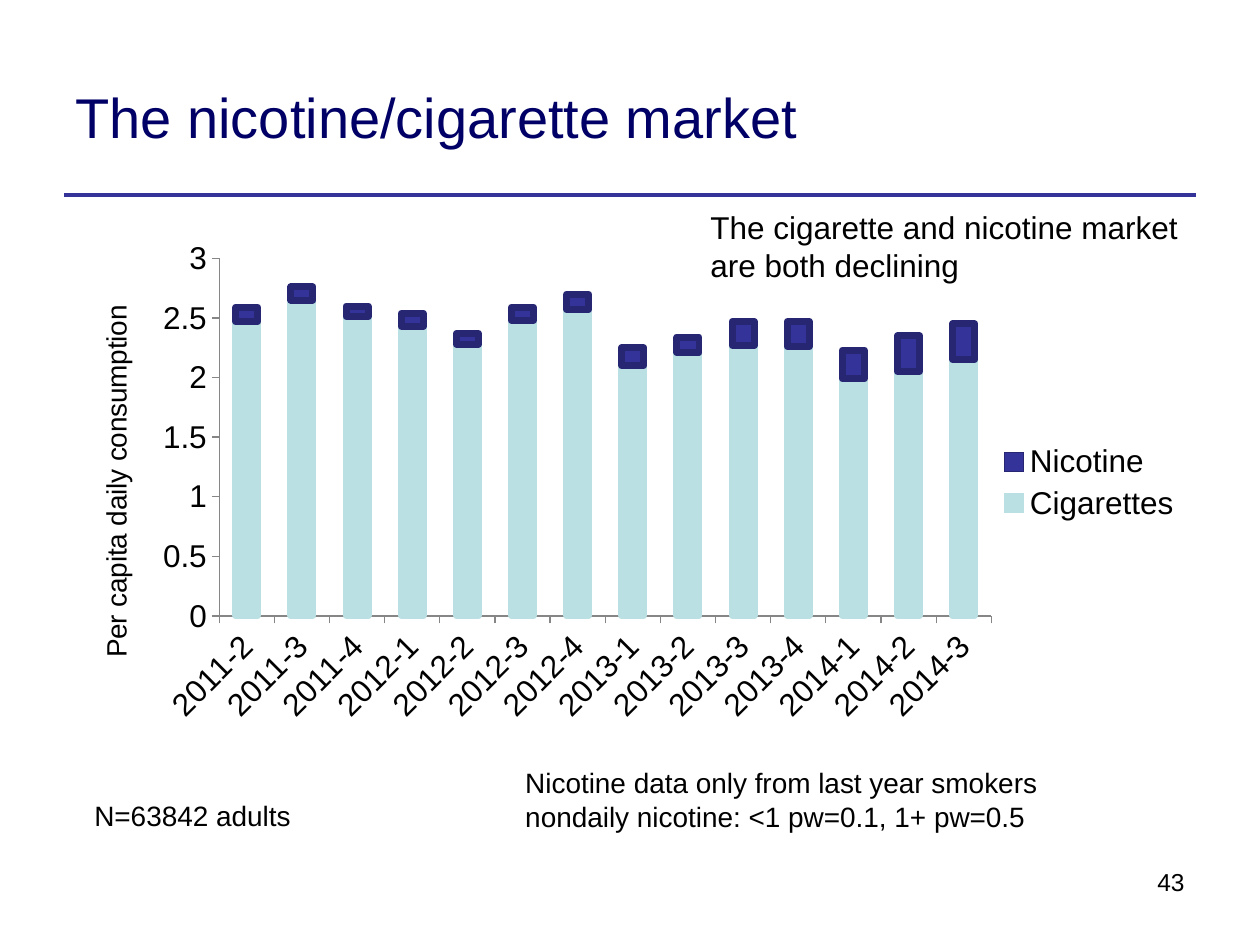
import lxml.etree
import pptx
import pptx.chart.data
import pptx.dml.color
import pptx.enum.chart
import pptx.enum.shapes
import pptx.enum.text
import pptx.oxml
import pptx.oxml.ns
import pptx.util
from pptx.util import Inches

FONT = "Arial"
BLACK = "000000"
QUARTERS = [f"{year}-{quarter}" for year in range(2011, 2015)
            for quarter in range(1, 5)][1:-1]
CIGARETTES = [2.47, 2.65, 2.51, 2.43, 2.28, 2.48, 2.57,
              2.1, 2.21, 2.27, 2.26, 1.99, 2.05, 2.15]
NICOTINE = [0.12, 0.11, 0.09, 0.11, 0.09, 0.11, 0.13,
            0.15, 0.13, 0.2, 0.21, 0.24, 0.3, 0.3]
SERIES_COLOURS = [("BBE0E3", "BBE0E3"), ("333399", "262673")]
PLOT_AREA = {"x": 0.14, "y": 0.053, "w": 0.681, "h": 0.713}


def rgb(value):
    """Turn a hex string into a colour."""
    return pptx.dml.color.RGBColor.from_string(value)


def style_font(font, size, colour=BLACK):
    """Set typeface, size and colour of a font."""
    font.name = FONT
    font.size = pptx.util.Pt(size)
    font.bold = False
    font.color.rgb = rgb(colour)


def style_line(line, colour, width):
    """Set colour and width of a line."""
    line.color.rgb = rgb(colour)
    line.width = pptx.util.Pt(width)


def add_text(slide, box, lines, size, colour=BLACK, wrap=True,
             align=pptx.enum.text.PP_ALIGN.LEFT,
             anchor=pptx.enum.text.MSO_ANCHOR.TOP):
    """Add a text box with one paragraph for each line."""
    frame = slide.shapes.add_textbox(*map(Inches, box)).text_frame
    frame.word_wrap = wrap
    frame.vertical_anchor = anchor
    frame.text = "\n".join(lines)
    for paragraph in frame.paragraphs:
        paragraph.alignment = align
        style_font(paragraph.font, size, colour)


def add_rule(slide):
    """Draw the rule below the title."""
    rule = slide.shapes.add_connector(
        pptx.enum.shapes.MSO_CONNECTOR.STRAIGHT,
        Inches(0.51), Inches(1.55), Inches(9.49), Inches(1.55))
    style_line(rule.line, "333399", 2.25)
    lxml.etree.SubElement(rule._element.spPr, pptx.oxml.ns.qn("a:effectLst"))


def place_plot(chart):
    """Fix the inner plot area as fractions of the chart."""
    plot_area = chart.plots[0]._element.getparent()
    for layout in plot_area.findall(pptx.oxml.ns.qn("c:layout")):
        plot_area.remove(layout)
    settings = {"layoutTarget": "inner", "xMode": "edge", "yMode": "edge",
                **PLOT_AREA}
    items = "".join(f'<c:{tag} val="{value}"/>'
                    for tag, value in settings.items())
    plot_area.insert(0, pptx.oxml.parse_xml(
        f'<c:layout {pptx.oxml.ns.nsdecls("c")}>'
        f"<c:manualLayout>{items}</c:manualLayout></c:layout>"))


def style_axes(chart):
    """Format both axes and title the value axis."""
    for axis in (chart.category_axis, chart.value_axis):
        axis.has_major_gridlines = False
        axis.major_tick_mark = pptx.enum.chart.XL_TICK_MARK.OUTSIDE
        axis.minor_tick_mark = pptx.enum.chart.XL_TICK_MARK.NONE
        style_line(axis.format.line, "868686", 0.75)
        style_font(axis.tick_labels.font, 18)
    consumption = chart.value_axis
    consumption.minimum_scale = 0
    consumption.maximum_scale = 3
    consumption.major_unit = 0.5
    consumption.tick_labels.number_format = "General"
    consumption.tick_labels.number_format_is_linked = False
    title = consumption.axis_title.text_frame
    title.text = "Per capita daily consumption"
    style_font(title.paragraphs[0].runs[0].font, 16)
    body = title._txBody.find(pptx.oxml.ns.qn("a:bodyPr"))
    body.set("rot", "-5400000")
    body.set("vert", "horz")


def add_market_chart(slide):
    """Add the stacked columns of daily consumption."""
    market = pptx.chart.data.CategoryChartData()
    market.categories = QUARTERS
    market.add_series("Cigarettes", CIGARETTES)
    market.add_series("Nicotine", NICOTINE)
    chart = slide.shapes.add_chart(
        pptx.enum.chart.XL_CHART_TYPE.COLUMN_STACKED,
        *map(Inches, (0.48, 1.84, 9, 3.98)), market).chart
    style_font(chart.font, 18)
    chart.has_title = False
    chart.has_legend = True
    chart.legend.position = pptx.enum.chart.XL_LEGEND_POSITION.RIGHT
    chart.legend.include_in_layout = False
    style_font(chart.legend.font, 18)
    columns = chart.plots[0]
    columns.gap_width = 150
    columns.overlap = 100
    columns.vary_by_categories = False
    for series, (fill, outline) in zip(columns.series, SERIES_COLOURS):
        series.format.fill.solid()
        series.format.fill.fore_color.rgb = rgb(fill)
        style_line(series.format.line, outline, 4)
    style_axes(chart)
    place_plot(chart)


def main():
    """Build the slide and save it."""
    deck = pptx.Presentation()
    deck.slide_width = Inches(10)
    deck.slide_height = Inches(7.5)
    slide = deck.slides.add_slide(deck.slide_layouts[6])
    add_rule(slide)
    add_text(slide, (0.5, 0.3, 7.89, 1.25), ["The nicotine/cigarette market"],
             32, "000066", anchor=pptx.enum.text.MSO_ANCHOR.MIDDLE)
    add_text(slide, (6.73, 6.83, 2.77, 0.52), ["43"], 14,
             align=pptx.enum.text.PP_ALIGN.RIGHT)
    add_market_chart(slide)
    add_text(slide, (0.65, 6.29, 1.78, 0.37), ["N=63842 adults"], 16,
             wrap=False)
    add_text(slide, (4.07, 6.03, 4.32, 0.64),
             ["Nicotine data only from last year smokers",
              "nondaily nicotine: <1 pw=0.1, 1+ pw=0.5"], 16, wrap=False)
    add_text(slide, (5.54, 1.6, 3.96, 0.71),
             ["The cigarette and nicotine market are both declining"], 18)
    deck.save("out.pptx")


if __name__ == "__main__":
    main()
